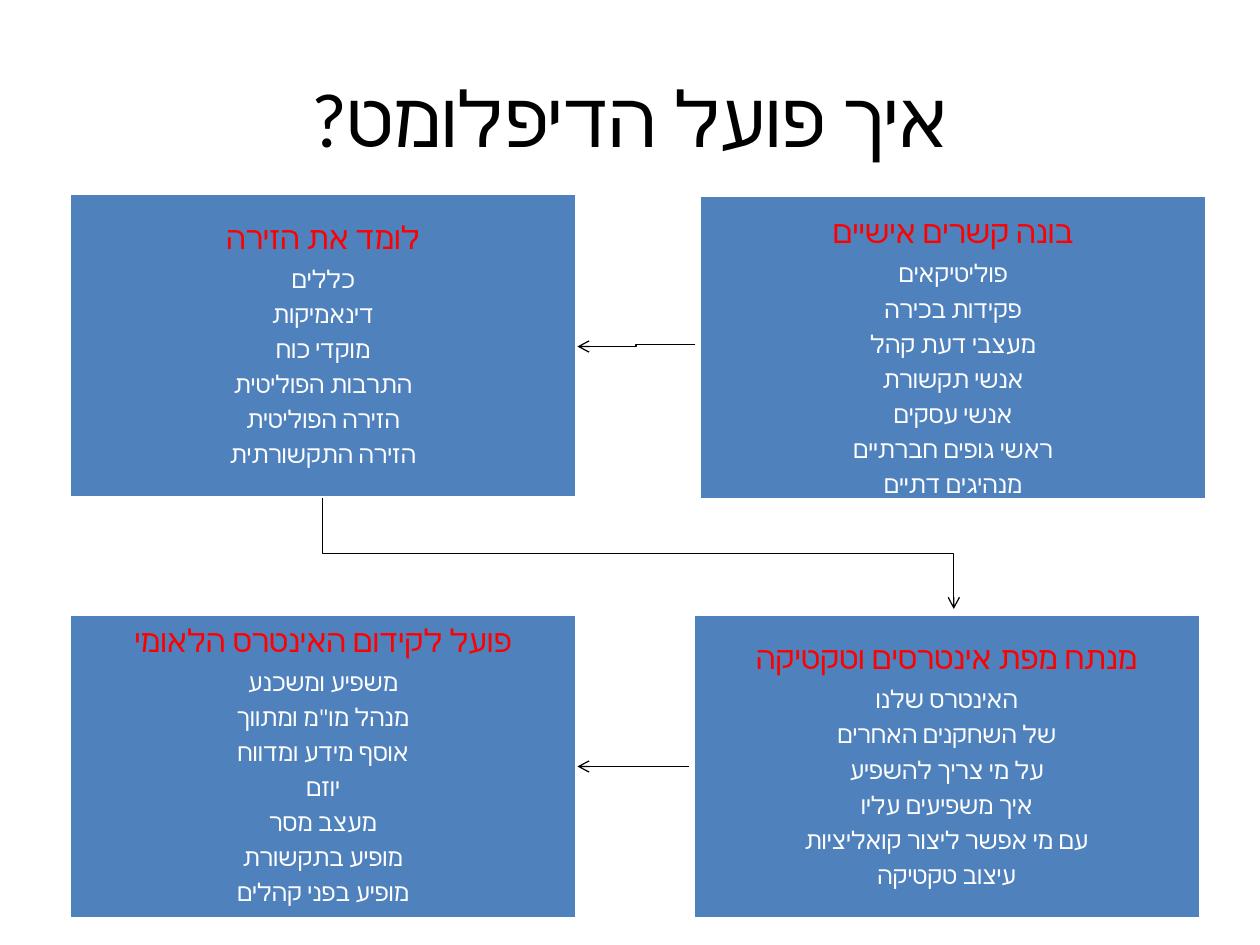
import dataclasses

import pptx
import pptx.dml.color
import pptx.enum.shapes
import pptx.enum.text
import pptx.oxml
import pptx.oxml.ns
import pptx.util

Pt = pptx.util.Pt
RGB = pptx.dml.color.RGBColor


@dataclasses.dataclass(frozen=True)
class Theme:
    """Colours, font and type sizes of the slide."""
    font: str = "Calibri"
    ink: RGB = RGB(0, 0, 0)
    panel: RGB = RGB(0x4F, 0x81, 0xBD)
    paper: RGB = RGB(255, 255, 255)
    heading: RGB = RGB(255, 0, 0)
    title_size: int = 44
    heading_size: int = 18
    item_size: int = 14


THEME = Theme()
PANEL_SIZE = (290, 174)
PANELS = [
    ((39.6, 110.4), (10, 10), "לומד את הזירה", [
        "כללים", "דינאמיקות", "מוקדי כוח", "התרבות הפוליטית",
        "הזירה הפוליטית", "הזירה התקשורתית"]),
    ((399.6, 111.6), (16, 4.3), "בונה קשרים אישיים", [
        "פוליטיקאים", "פקידות בכירה", "מעצבי דעת קהל", "אנשי תקשורת",
        "אנשי עסקים", "ראשי גופים חברתיים", "מנהיגים דתיים"]),
    ((39.6, 350.8), (10, 10), "פועל לקידום האינטרס הלאומי", [
        "משפיע ומשכנע", "מנהל מו\"מ ומתווך", "אוסף מידע ומדווח", "יוזם",
        "מעצב מסר", "מופיע בתקשורת", "מופיע בפני קהלים"]),
    ((396, 350.8), (10, 10), "מנתח מפת אינטרסים וטקטיקה", [
        "האינטרס שלנו", "של השחקנים האחרים", "על מי צריך להשפיע",
        "איך משפיעים עליו", "עם מי אפשר ליצור קואליציות", "עיצוב טקטיקה"]),
]


def apply_format(target, values):
    """Set each named attribute of the target."""
    for name, value in values.items():
        setattr(target, name, value)


def write_line(paragraph, text, size, color, **spacing):
    """Write one centred right-to-left line."""
    apply_format(paragraph, {"alignment": pptx.enum.text.PP_ALIGN.CENTER, **spacing})
    paragraph._p.get_or_add_pPr().set("rtl", "1")
    run = paragraph.add_run()
    run.text = text
    apply_format(run.font, {"size": Pt(size), "name": THEME.font})
    run.font.color.rgb = color
    script_font = pptx.oxml.parse_xml(
        f'<a:cs {pptx.oxml.ns.nsdecls("a")} typeface="{THEME.font}"/>')
    run.font._element.append(script_font)


def add_title(slide, box, text):
    """Place the slide title in its box."""
    frame = slide.shapes.add_textbox(*map(Pt, box)).text_frame
    apply_format(frame, {"word_wrap": True,
                         "vertical_anchor": pptx.enum.text.MSO_ANCHOR.MIDDLE})
    write_line(frame.paragraphs[0], text, THEME.title_size, THEME.ink)


def add_panel(slide, box, insets, heading, items):
    """Place a filled panel with a heading and its items."""
    panel = slide.shapes.add_shape(
        pptx.enum.shapes.MSO_SHAPE.RECTANGLE, *map(Pt, box))
    panel.shadow.inherit = False
    panel.fill.solid()
    panel.fill.fore_color.rgb = THEME.panel
    panel.line.color.rgb = THEME.paper
    panel.line.width = Pt(2)
    top, rest = insets
    frame = panel.text_frame
    apply_format(frame, {
        "word_wrap": True,
        "vertical_anchor": pptx.enum.text.MSO_ANCHOR.MIDDLE,
        "margin_top": Pt(top), "margin_bottom": Pt(rest),
        "margin_left": Pt(rest), "margin_right": Pt(rest)})
    lines = [(heading, THEME.heading_size, THEME.heading)]
    lines += [(item, THEME.item_size, THEME.paper) for item in items]
    for index, (text, size, color) in enumerate(lines):
        paragraph = frame.add_paragraph() if index else frame.paragraphs[0]
        write_line(paragraph, text, size, color,
                   line_spacing=0.9, space_after=Pt(0.35 * size))


def add_arrow(slide, kind, start, end, downward=False):
    """Place an arrow from start to end, leaving downward if asked."""
    (x1, y1), (x2, y2) = start, end
    if downward:
        mid_x, mid_y = (x1 + x2) / 2, (y1 + y2) / 2
        half_w, half_h = (y2 - y1) / 2, (x2 - x1) / 2
        x1, y1, x2, y2 = (mid_x + half_w, mid_y - half_h,
                          mid_x - half_w, mid_y + half_h)
    arrow = slide.shapes.add_connector(kind, *map(Pt, (x1, y1, x2, y2)))
    arrow.line.color.rgb = THEME.ink
    arrow.line.width = Pt(0.75)
    properties = arrow._element.spPr
    if downward:
        properties.find(pptx.oxml.ns.qn("a:xfrm")).set("rot", "16200000")
    namespace = pptx.oxml.ns.nsdecls("a")
    arrow.line._get_or_add_ln().append(
        pptx.oxml.parse_xml(f'<a:tailEnd {namespace} type="arrow"/>'))
    properties.append(pptx.oxml.parse_xml(f"<a:effectLst {namespace}/>"))


def main():
    """Build and save the slide."""
    deck = pptx.Presentation()
    apply_format(deck, {"slide_width": Pt(720), "slide_height": Pt(540)})
    slide = deck.slides.add_slide(deck.slide_layouts[6])
    add_title(slide, (36, 21.6, 648, 90), "איך פועל הדיפלומט?")
    for corner, insets, heading, items in PANELS:
        add_panel(slide, (*corner, *PANEL_SIZE), insets, heading, items)
    kinds = pptx.enum.shapes.MSO_CONNECTOR
    add_arrow(slide, kinds.ELBOW, (397, 197), (330, 198))
    add_arrow(slide, kinds.ELBOW, (184.4, 284.8), (545, 348), downward=True)
    add_arrow(slide, kinds.STRAIGHT, (393.6, 438), (330, 438))
    deck.save("out.pptx")


if __name__ == "__main__":
    main()
